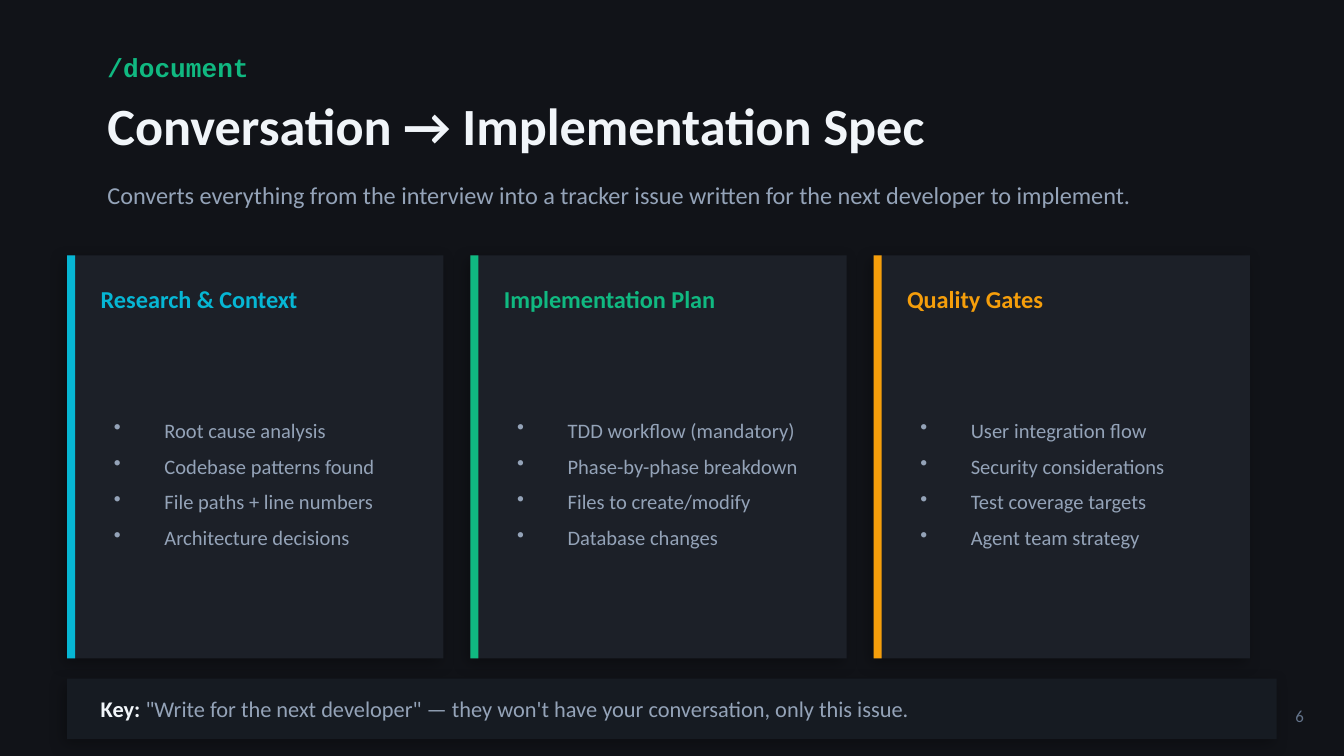
from lxml.etree import SubElement as add_element
from pptx import Presentation
from pptx.dml.color import RGBColor
from pptx.enum.shapes import MSO_SHAPE as Preset
from pptx.enum.text import MSO_ANCHOR as Anchor, PP_ALIGN as Align
from pptx.oxml.ns import qn
from pptx.util import Inches, Pt

# Colours and fonts
BACKGROUND, CARD, BAND = "111318", "1C2028", "161B22"
WHITE, MUTED, DIM = "F1F5F9", "94A3B8", "64748B"
CYAN, GREEN, AMBER = "06B6D4", "10B981", "F59E0B"
SANS, MONO = "Calibri", "Courier New"

# Card grid, in inches
LEFT, TOP, PITCH = 0.5, 1.9, 3
CARD_WIDTH, CARD_HEIGHT, STRIPE, PADDING = 2.8, 3, 0.06, 0.25

CARDS = [
    ("Research & Context", CYAN,
     ["Root cause analysis", "Codebase patterns found",
      "File paths + line numbers", "Architecture decisions"]),
    ("Implementation Plan", GREEN,
     ["TDD workflow (mandatory)", "Phase-by-phase breakdown",
      "Files to create/modify", "Database changes"]),
    ("Quality Gates", AMBER,
     ["User integration flow", "Security considerations",
      "Test coverage targets", "Agent team strategy"]),
]


def paint(target, colour):
    """Give a fill or a font a solid hex colour."""
    if hasattr(target, "solid"):
        target.solid()
        target.fore_color.rgb = RGBColor.from_string(colour)
    else:
        target.color.rgb = RGBColor.from_string(colour)


def add_span(para, text, size, colour, bold=False, font=SANS):
    span = para.add_run()
    span.text = text
    span.font.name, span.font.size, span.font.bold = font, Pt(size), bold
    paint(span.font, colour)


def add_box(page, left, top, width, height, inset=True):
    """Add an empty, vertically centred text box and return its frame."""
    box = page.shapes.add_textbox(*map(Inches, (left, top, width, height)))
    frame = box.text_frame
    frame.word_wrap = True
    frame.vertical_anchor = Anchor.MIDDLE
    if not inset:
        frame.margin_left = frame.margin_right = 0
        frame.margin_top = frame.margin_bottom = 0
    return frame


def add_line(page, area, *spans):
    """Add one line of text made of (text, size, colour, ...) spans."""
    para = add_box(page, *area, inset=False).paragraphs[0]
    for span in spans:
        add_span(para, *span)


def add_panel(page, left, top, width, height, colour, raised=False):
    panel = page.shapes.add_shape(
        Preset.RECTANGLE, *map(Inches, (left, top, width, height)))
    panel.shadow.inherit = False
    paint(panel.fill, colour)
    panel.line.fill.background()
    if raised:
        effects = panel._element.spPr.find(qn("a:effectLst"))
        shadow = add_element(
            effects, qn("a:outerShdw"), blurRad=str(Pt(8)), dist=str(Pt(3)),
            dir=str(135 * 60000), algn="bl", rotWithShape="0")
        black = add_element(shadow, qn("a:srgbClr"), val="000000")
        add_element(black, qn("a:alpha"), val="30000")


def add_bullets(page, area, items):
    frame = add_box(page, *area)
    for index, item in enumerate(items):
        para = frame.add_paragraph() if index else frame.paragraphs[0]
        para.space_after = Pt(6)
        props = para._p.get_or_add_pPr()
        props.set("marL", str(Pt(27)))
        props.set("indent", str(-Pt(27)))
        add_element(props, qn("a:buSzPct"), val="100000")
        add_element(props, qn("a:buChar"), char="•")
        para.font.size = Pt(11)
        add_span(para, item, 11, MUTED)


def add_card(page, column, title, accent, items):
    left = LEFT + column * PITCH
    inner = left + PADDING
    add_panel(page, left, TOP, CARD_WIDTH, CARD_HEIGHT, CARD, raised=True)
    add_panel(page, left, TOP, STRIPE, CARD_HEIGHT, accent)
    add_line(page, (inner, TOP + 0.15, 2.3, 0.35), (title, 13, accent, True))
    add_bullets(page, (inner, TOP + 0.6, 2.4, 2.2), items)


def main():
    # A 16:9 page, ten inches wide
    deck = Presentation()
    deck.slide_width = Inches(10)
    deck.slide_height = deck.slide_width * 9 // 16
    page = deck.slides.add_slide(deck.slide_layouts[6])
    paint(page.background.fill, BACKGROUND)

    # Page number
    number = add_box(page, 9.3, 5.15, 0.5, 0.35).paragraphs[0]
    number.alignment = Align.RIGHT
    add_span(number, "6", 9, DIM)

    # Heading
    add_line(page, (0.8, 0.3, 4, 0.4), ("/document", 14, GREEN, True, MONO))
    add_line(page, (0.8, 0.65, 8, 0.55),
             ("Conversation → Implementation Spec", 28, WHITE, True))
    add_line(page, (0.8, 1.25, 8, 0.4),
             ("Converts everything from the interview into a tracker issue "
              "written for the next developer to implement.", 13, MUTED))

    # Cards
    for column, card in enumerate(CARDS):
        add_card(page, column, *card)

    # Key message
    add_panel(page, LEFT, 5.05, 9, 0.45, BAND, raised=True)
    add_line(page, (LEFT + PADDING, 5.05, 8.5, 0.45),
             ("Key: ", 12, WHITE, True),
             ('"Write for the next developer" — they won\'t have your '
              "conversation, only this issue.", 12, MUTED))

    deck.save("out.pptx")


if __name__ == "__main__":
    main()
